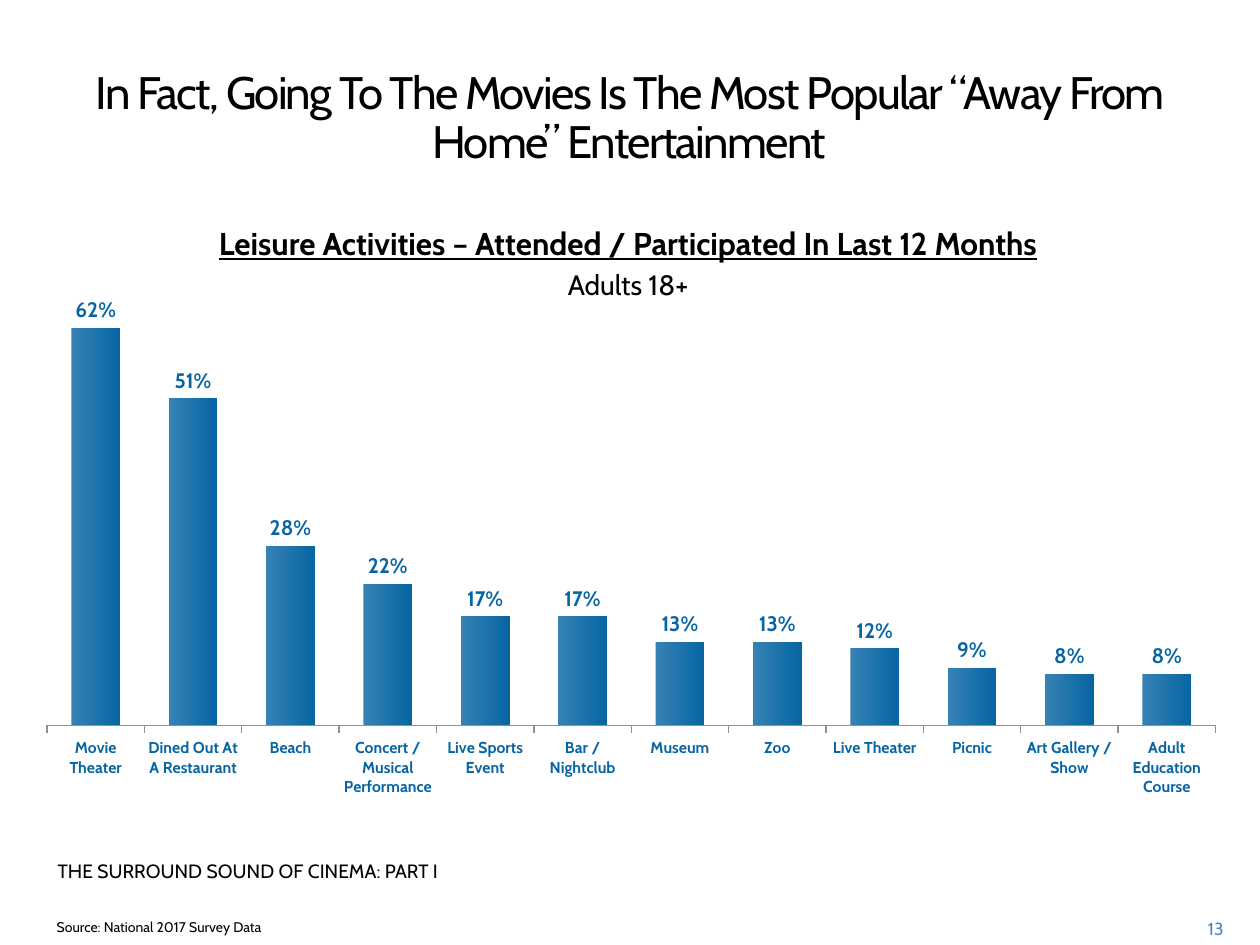
from lxml.etree import SubElement
from pptx import Presentation
from pptx.chart.data import CategoryChartData
from pptx.dml.color import RGBColor
from pptx.enum.chart import XL_CHART_TYPE as Chart, XL_LABEL_POSITION as Spot
from pptx.enum.chart import XL_TICK_MARK as Tick
from pptx.enum.text import MSO_ANCHOR as Anchor, MSO_AUTO_SIZE as Fit, PP_ALIGN as Align
from pptx.oxml.ns import qn
from pptx.util import Inches, Pt

ACTIVITIES = {
    "Movie Theater": 0.62,
    "Dined Out At A Restaurant": 0.51,
    "Beach": 0.28,
    "Concert / Musical Performance": 0.22,
    "Live Sports Event": 0.17,
    "Bar / Nightclub": 0.17,
    "Museum": 0.13,
    "Zoo": 0.13,
    "Live Theater": 0.12,
    "Picnic": 0.09,
    "Art Gallery / Show": 0.08,
    "Adult Education Course": 0.08,
}


def color(code):
    return RGBColor.from_string(code)


class Page:
    face, ink, blue, light = "Cabin", "000000", "0765A3", "3682B4"

    def __init__(self, slide):
        self.slide = slide

    def style(self, font, size, shade=None, bold=False):
        font.name, font.size, font.bold = self.face, Pt(size), bold
        font.color.rgb = color(shade or self.ink)

    def fill(self, shape, box, lines, size, shade=None, align=Align.LEFT):
        """Place a text shape and write its lines, each a paragraph."""
        shape.left, shape.top, shape.width, shape.height = map(Inches, box)
        frame = shape.text_frame
        frame.text = lines
        frame.word_wrap, frame.auto_size = True, Fit.NONE
        frame.vertical_anchor = Anchor.TOP
        for para in frame.paragraphs:
            para.alignment = align
            para.space_before = Pt(0)
            self.style(para.runs[0].font, size, shade)
        return frame.paragraphs

    def title(self, box, words):
        para = self.fill(self.slide.shapes.title, box, words, 26, align=Align.CENTER)[0]
        para.line_spacing = Pt(28)
        para.runs[0].font._element.set("spc", "-100")

    def body(self, index, box, lines, size, align=Align.LEFT):
        paras = self.fill(self.slide.placeholders[index], box, lines, size, align=align)
        for para in paras:
            props = para._p.get_or_add_pPr()
            props.set("marL", "0")
            props.set("indent", "0")
            SubElement(props, qn("a:buNone"))
        return paras

    def text(self, box, words, size, shade=None, align=Align.LEFT):
        shape = self.slide.shapes.add_textbox(*map(Inches, box))
        self.fill(shape, box, words, size, shade, align)

    def columns(self, box, values):
        data = CategoryChartData(number_format="0%")
        data.categories = values.keys()
        data.add_series("Series 1", values.values())
        chart = self.slide.shapes.add_chart(
            Chart.COLUMN_CLUSTERED, *map(Inches, box), data).chart
        chart.has_legend = chart.has_title = False
        self.style(chart.font, 18)

        plot = chart.plots[0]
        plot.gap_width, plot.overlap = 100, -20
        plot.vary_by_categories = False
        fill = plot.series[0].format.fill
        fill.gradient()
        fill.gradient_angle = 0
        for stop, shade in zip(fill.gradient_stops, (self.light, self.blue)):
            stop.color.rgb = color(shade)

        plot.has_data_labels = True
        labels = plot.data_labels
        labels.show_value, labels.position = True, Spot.OUTSIDE_END
        labels.number_format, labels.number_format_is_linked = "0%", False
        self.style(labels.font, 12, self.blue, True)

        scale = chart.value_axis
        scale.minimum_scale, scale.maximum_scale = 0, 0.7
        scale.has_major_gridlines = scale.visible = False
        axis = chart.category_axis
        axis.major_tick_mark = Tick.OUTSIDE
        axis.format.line.color.rgb = color("8395A2")
        axis.format.line.width = Pt(0.75)
        self.style(axis.tick_labels.font, 9, self.blue, True)
        self.inset(chart, x=0.02, y=0.02, w=0.96, h=0.83)

    def inset(self, chart, **parts):
        """Fix the inner plot area as fractions of the chart."""
        area = chart._chartSpace.chart.plotArea
        for old in area.findall(qn("c:layout")):
            area.remove(old)
        layout = SubElement(area, qn("c:layout"))
        area.insert(0, layout)
        manual = SubElement(layout, qn("c:manualLayout"))
        rules = {"layoutTarget": "inner", "xMode": "edge", "yMode": "edge", **parts}
        for name, value in rules.items():
            SubElement(manual, qn("c:" + name)).set("val", str(value))


def main():
    deck = Presentation()
    deck.slide_width, deck.slide_height = Inches(10), Inches(7.5)
    page = Page(deck.slides.add_slide(deck.slide_layouts[3]))
    page.title((0.18, 0.5, 9.63, 1.4),
               "In Fact, Going To The Movies Is The Most Popular “Away From Home” Entertainment")
    page.body(2, (0.35, 7.24, 6.08, 0.26), "Source: National 2017 Survey Data", 8)
    page.columns((0.18, 2.11, 9.66, 4.29), ACTIVITIES)
    head, group = page.body(
        1, (0.17, 1.73, 9.63, 0.74),
        "Leisure Activities – Attended / Participated In Last 12 Months\nAdults 18+",
        16, Align.CENTER)
    font = head.runs[0].font
    font.size, font.bold, font.underline = Pt(18), True, True
    group.space_before = Pt(3)
    page.text((0.36, 6.77, 3.67, 0.47), "THE SURROUND SOUND OF CINEMA: PART I", 11)
    page.text((9.2, 7.24, 0.61, 0.25), "13", 10, "508ABA", Align.RIGHT)
    deck.save("out.pptx")


if __name__ == "__main__":
    main()
